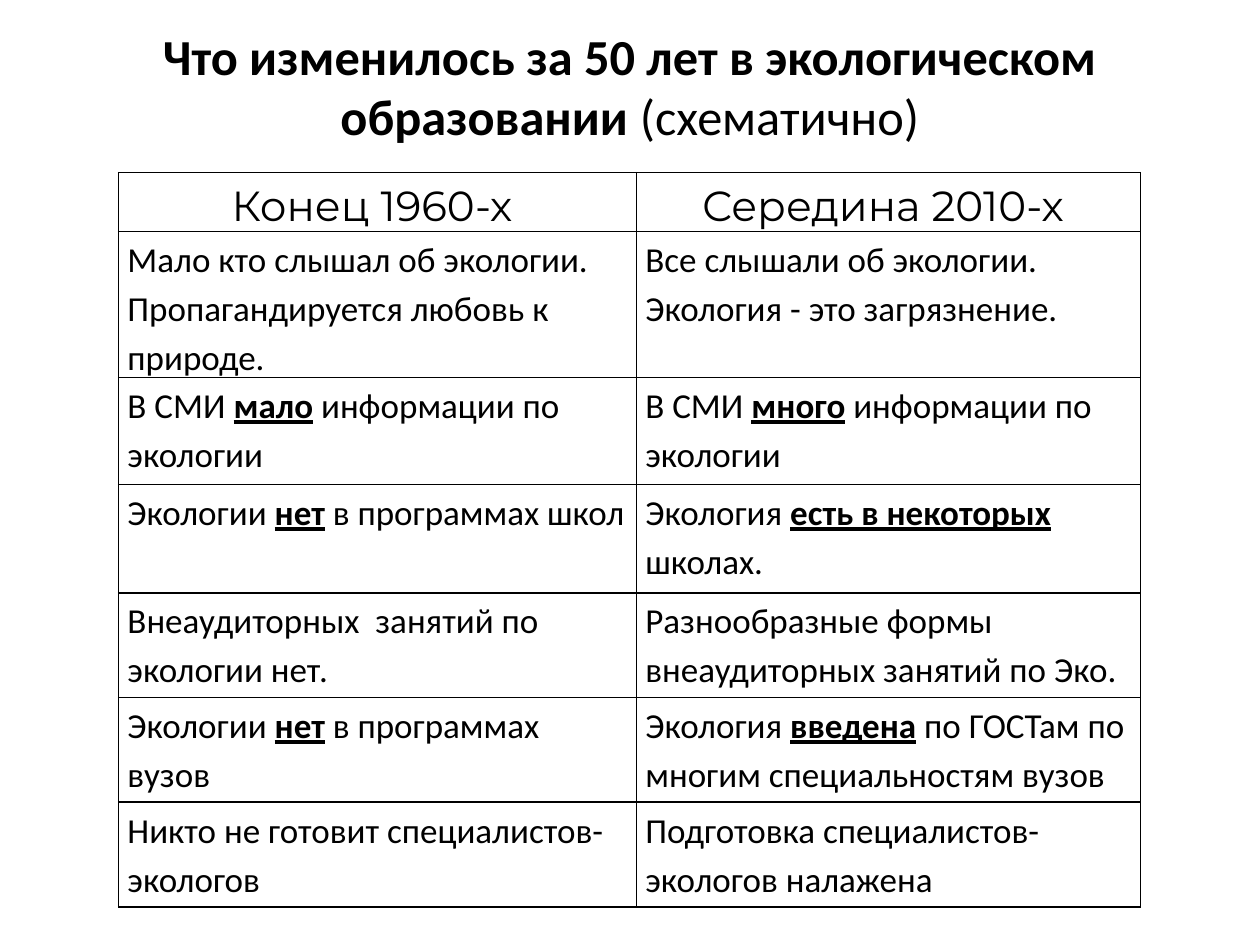
"""Build a slide comparing environmental education in the 1960s and the 2010s."""
from dataclasses import dataclass

from lxml.etree import SubElement
from pptx import Presentation
from pptx.dml.color import RGBColor
from pptx.enum.text import MSO_ANCHOR, PP_ALIGN
from pptx.oxml.ns import qn
from pptx.util import Cm, Pt


@dataclass(frozen=True)
class Theme:
    ink: str = "000000"
    body_font: str = "Calibri"
    header_font: str = "Montserrat"
    title_size: float = 28.8
    header_size: float = 24
    body_size: float = 20
    border: float = 1


@dataclass(frozen=True)
class Row:
    height: float
    before: str
    now: str


THEME = Theme()
EMPHASIS = "*"
TITLE = "*Что изменилось за 50 лет в экологическом образовании *(схематично)"
COLUMN_WIDTHS = (10.44, 10.16)
ROWS = (
    Row(0.97, "Конец 1960-х ", "Середина 2010-х "),
    Row(2.9, "Мало кто слышал об экологии. Пропагандируется любовь к природе.",
        "Все слышали об экологии. Экология - это загрязнение."),
    Row(2.16, "В СМИ *мало* информации по экологии",
        "В СМИ *много* информации по экологии"),
    Row(2.18, "Экологии *нет* в программах школ",
        "Экология *есть в некоторых *школах."),
    Row(2.11, "Внеаудиторных  занятий по экологии нет.",
        "Разнообразные формы внеаудиторных занятий по Эко."),
    Row(2.11, "Экологии *нет* в программах вузов",
        "Экология *введена* по ГОСТам по многим специальностям вузов"),
    Row(2.11, "Никто не готовит специалистов-экологов",
        "Подготовка специалистов-экологов налажена"),
)


def apply_format(target, values: dict) -> None:
    """Set every named attribute on the target."""
    for name, value in values.items():
        setattr(target, name, value)


def write_spans(para, text: str, font: str, size: float, emphasis: dict) -> None:
    """Write text as spans, emphasising the parts between marks."""
    for index, part in enumerate(text.split(EMPHASIS)):
        if not part:
            continue
        span = para.add_run()
        span.text = part
        style = {"name": font, "size": Pt(size), "bold": False}
        apply_format(span.font, style | (emphasis if index % 2 else {}))
        span.font.color.rgb = RGBColor.from_string(THEME.ink)


def draw_borders(cell) -> None:
    """Rule all four sides of a cell."""
    properties = cell._tc.get_or_add_tcPr()
    for position, side in enumerate(("lnL", "lnR", "lnT", "lnB")):
        line = SubElement(properties, qn(f"a:{side}"), w=str(Pt(THEME.border)))
        fill = SubElement(line, qn("a:solidFill"))
        SubElement(fill, qn("a:srgbClr"), val=THEME.ink)
        properties.insert(position, line)


def draw_title(page) -> None:
    """Add the centred heading."""
    box = page.shapes.add_textbox(Cm(1.27), Cm(0.53), Cm(22.86), Cm(2.39))
    apply_format(box.text_frame, {"word_wrap": True, "vertical_anchor": MSO_ANCHOR.MIDDLE})
    para = box.text_frame.paragraphs[0]
    para.alignment = PP_ALIGN.CENTER
    write_spans(para, TITLE, THEME.body_font, THEME.title_size, {"bold": True})


def fill_cell(cell, text: str, is_header: bool) -> None:
    """Format one table cell and write its text."""
    apply_format(cell, {"margin_left": Cm(0.18), "margin_right": Cm(0.18),
                        "margin_top": Cm(0.02), "margin_bottom": Cm(0)})
    cell.fill.background()
    draw_borders(cell)
    para = cell.text_frame.paragraphs[0]
    apply_format(para, {"line_spacing": 1.15, "space_after": Pt(10),
                        "alignment": PP_ALIGN.CENTER if is_header else PP_ALIGN.LEFT})
    font = THEME.header_font if is_header else THEME.body_font
    size = THEME.header_size if is_header else THEME.body_size
    write_spans(para, text, font, size, {"bold": True, "underline": True})


def draw_comparison(page) -> None:
    """Add the two-column comparison table."""
    height = sum(row.height for row in ROWS)
    frame = page.shapes.add_table(len(ROWS), len(COLUMN_WIDTHS), Cm(2.39), Cm(3.48),
                                  Cm(sum(COLUMN_WIDTHS)), Cm(height))
    table = frame.table
    apply_format(table, {"first_row": False, "horz_banding": False})
    for column, width in zip(table.columns, COLUMN_WIDTHS):
        column.width = Cm(width)
    for row_index, row in enumerate(ROWS):
        table.rows[row_index].height = Cm(row.height)
        for column_index, text in enumerate((row.before, row.now)):
            fill_cell(table.cell(row_index, column_index), text, row_index == 0)


def main() -> None:
    """Build and save the deck."""
    deck = Presentation()
    apply_format(deck, {"slide_width": Cm(25.4), "slide_height": Cm(19.05)})
    page = deck.slides.add_slide(deck.slide_layouts[6])
    draw_title(page)
    draw_comparison(page)
    deck.save("out.pptx")


if __name__ == "__main__":
    main()
